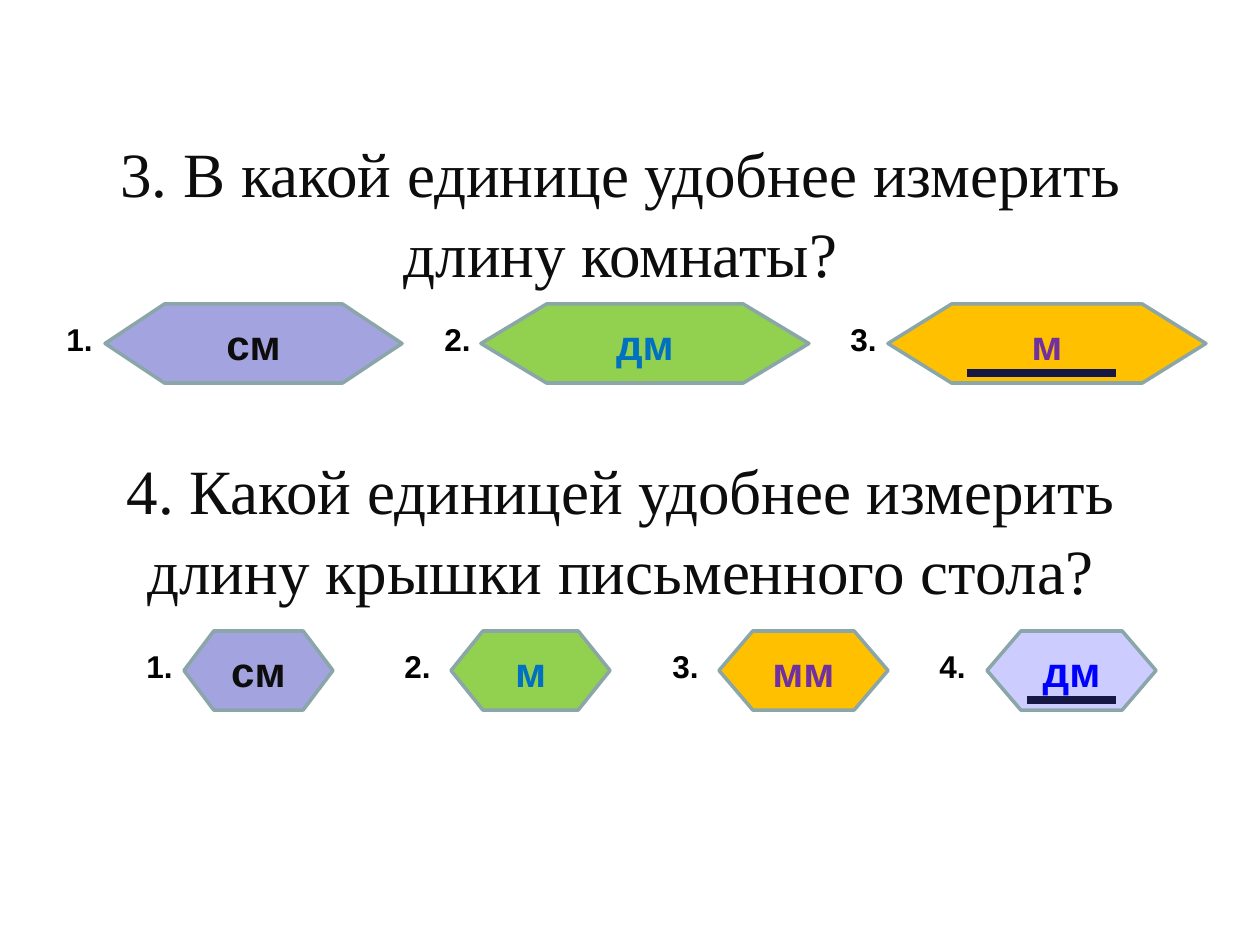
from dataclasses import dataclass

from pptx import Presentation
from pptx.dml.color import RGBColor
from pptx.enum.shapes import MSO_CONNECTOR as Connector, MSO_SHAPE as Shape
from pptx.enum.text import MSO_ANCHOR as Anchor, PP_ALIGN as Align
from pptx.oxml.ns import qn
from pptx.util import Pt

PX = 914400 / 126


@dataclass(frozen=True)
class Theme:
    ink: str = "0D0D0D"
    label: str = "000000"
    outline: str = "8AA6A8"
    underline: str = "171745"
    violet: str = "A3A3E0"
    green: str = "92D050"
    amber: str = "FFC000"
    lilac: str = "CCCCFF"
    blue_text: str = "0070C0"
    purple_text: str = "7030A0"
    bright_text: str = "0000FF"
    serif: str = "Times New Roman"
    sans: str = "Arial"
    question_size: int = 36
    answer_size: int = 24
    label_size: int = 18


THEME = Theme()
PALETTE = [
    (THEME.violet, THEME.ink),
    (THEME.green, THEME.blue_text),
    (THEME.amber, THEME.purple_text),
    (THEME.lilac, THEME.bright_text),
]


def px(*lengths):
    return [round(length * PX) for length in lengths]


def write(shape, text, font, size, color, bold=False, align=Align.CENTER, spacing=None):
    shape.text_frame.word_wrap = True
    paragraph = shape.text_frame.paragraphs[0]
    paragraph.alignment = align
    paragraph.line_spacing = spacing
    run = paragraph.add_run()
    run.text = text
    run.font.name = font
    run.font.size = Pt(size)
    run.font.bold = bold
    run.font.color.rgb = RGBColor.from_string(color)


def add_question(slide, top, text):
    box = slide.shapes.add_textbox(*px(35, top, 1171, 165))
    write(box, text, THEME.serif, THEME.question_size, THEME.ink, spacing=1.05)


def add_label(slide, left, top, width, text):
    box = slide.shapes.add_textbox(*px(left, top, width, 50))
    write(box, text, THEME.sans, THEME.label_size, THEME.label, True, Align.LEFT)


def add_answer(slide, left, top, width, text, fill, color):
    shape = slide.shapes.add_shape(Shape.FLOWCHART_PREPARATION, *px(left, top, width, 79))
    shape.shadow.inherit = False
    shape.fill.solid()
    shape.fill.fore_color.rgb = RGBColor.from_string(fill)
    shape.line.color.rgb = RGBColor.from_string(THEME.outline)
    shape.line.width = Pt(2)
    shape.text_frame.vertical_anchor = Anchor.MIDDLE
    write(shape, text, THEME.sans, THEME.answer_size, color, True)


def add_underline(slide, left, right, y):
    line = slide.shapes.add_connector(Connector.STRAIGHT, *px(left, y, right, y))
    line.line.color.rgb = RGBColor.from_string(THEME.underline)
    line.line.width = Pt(4.5)
    properties = line._element.spPr
    properties.append(properties.makeelement(qn("a:effectLst"), {}))


def add_answers(slide, top, answers, underline_left):
    for number, (answer, colors) in enumerate(zip(answers, PALETTE), 1):
        text, label_left, left, width = answer
        add_answer(slide, left, top, width, text, *colors)
        add_label(slide, label_left, top + 10, 70 if number == 2 else 59, f"{number}.")
    add_underline(slide, underline_left, 1116, top + 69)


def main():
    presentation = Presentation()
    presentation.slide_width, presentation.slide_height = px(1260, 945)
    slide = presentation.slides.add_slide(presentation.slide_layouts[6])

    add_question(slide, 125, "3. В какой единице удобнее измерить длину комнаты?")
    room_answers = [("см", 54, 105, 297), ("дм", 432, 481, 328), ("м", 838, 888, 318)]
    add_answers(slide, 304, room_answers, 967)

    add_question(slide, 442, "4. Какой единицей удобнее измерить длину крышки письменного стола?")
    desk_answers = [
        ("см", 134, 184, 149),
        ("м", 392, 451, 159),
        ("мм", 660, 719, 169),
        ("дм", 927, 987, 169),
    ]
    add_answers(slide, 631, desk_answers, 1027)

    presentation.save("out.pptx")


if __name__ == "__main__":
    main()
